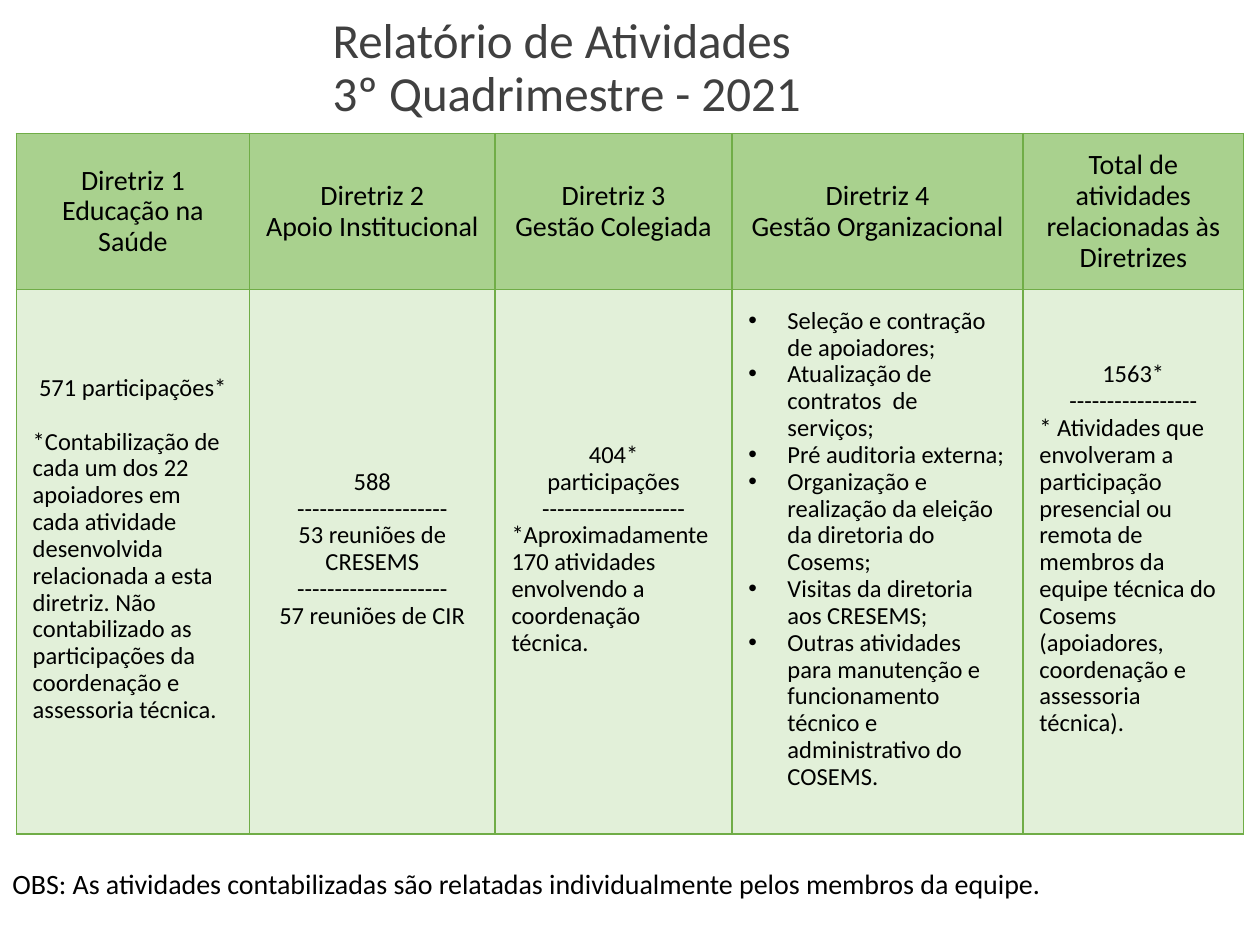
from pptx import Presentation
from pptx.dml.color import RGBColor
from pptx.enum.text import MSO_ANCHOR, MSO_AUTO_SIZE, PP_ALIGN
from pptx.oxml.ns import qn
from pptx.util import Inches, Pt
from lxml.etree import SubElement

FONT = "Calibri"
COLORS = {
    "title": "404040",
    "text": "000000",
    "header": "A9D18E",
    "body": "E2F0D9",
    "border": "70AD47",
}
INSET = 0.13
COLUMN_WIDTHS = [1.85, 1.95, 1.88, 2.31, 1.75]
ROW_HEIGHTS = [1.24, 4.32]

HEADERS = [
    ["Diretriz 1", "Educação na Saúde"],
    ["Diretriz 2", "Apoio Institucional"],
    ["Diretriz 3", "Gestão Colegiada"],
    ["Diretriz 4", "Gestão Organizacional"],
    ["Total de atividades relacionadas às Diretrizes"],
]
# Each column: centred lines, left-aligned note, bullets, gap before the note
RESULTS = [
    (["571 participações*"],
     ["*Contabilização de cada um dos 22 apoiadores em cada atividade "
      "desenvolvida relacionada a esta diretriz. Não contabilizado as "
      "participações da coordenação e assessoria técnica."], [], 15.4),
    (["588", "-" * 20, "53 reuniões de CRESEMS", "-" * 20, "57 reuniões de CIR"],
     [], [], 0),
    (["404*", "participações", "-" * 19],
     ["*Aproximadamente 170 atividades envolvendo a coordenação técnica."], [], 0),
    ([], [],
     ["Seleção e contração de apoiadores;",
      "Atualização de contratos  de serviços;",
      "Pré auditoria externa;",
      "Organização e realização da eleição da diretoria do Cosems;",
      "Visitas da diretoria aos CRESEMS;",
      "Outras atividades para manutenção e funcionamento técnico e "
      "administrativo do COSEMS."], 0),
    (["1563*", "-" * 17],
     ["* Atividades que envolveram a participação presencial ou remota de "
      "membros da equipe técnica do Cosems (apoiadores, coordenação e "
      "assessoria técnica)."], [], 0),
]


def color(name):
    return RGBColor.from_string(COLORS[name])


def add_bullet(para):
    properties = para._p.get_or_add_pPr()
    properties.set("marL", str(Inches(0.31)))
    properties.set("indent", str(-Inches(0.31)))
    bullet_color = SubElement(properties, qn("a:buClr"))
    SubElement(bullet_color, qn("a:srgbClr")).set("val", COLORS["text"])
    SubElement(properties, qn("a:buFont")).set("typeface", "Arial")
    SubElement(properties, qn("a:buChar")).set("char", "•")


def write_lines(frame, lines, size, ink="text", spacing=0.9):
    """Write (text, alignment, bulleted, space before) lines into a text frame."""
    for index, (text, align, bulleted, gap) in enumerate(lines):
        para = frame.paragraphs[0] if index == 0 else frame.add_paragraph()
        para.alignment = align
        para.line_spacing = spacing
        para.space_before = Pt(gap)
        para.space_after = Pt(0)
        if bulleted:
            add_bullet(para)
        span = para.add_run()
        span.text = text
        span.font.name = FONT
        span.font.size = Pt(size)
        span.font.color.rgb = color(ink)


def set_insets(holder, bottom=INSET):
    holder.margin_left = holder.margin_right = holder.margin_top = Inches(INSET)
    holder.margin_bottom = Inches(bottom)


def add_borders(cell):
    properties = cell._tc.get_or_add_tcPr()
    for index, side in enumerate(("a:lnL", "a:lnR", "a:lnT", "a:lnB")):
        line = SubElement(properties, qn(side))
        line.set("w", str(Pt(1)))
        fill = SubElement(line, qn("a:solidFill"))
        SubElement(fill, qn("a:srgbClr")).set("val", COLORS["border"])
        properties.insert(index, line)


def fill_cell(cell, lines, size, background, bottom=INSET):
    cell.fill.solid()
    cell.fill.fore_color.rgb = color(background)
    cell.vertical_anchor = MSO_ANCHOR.MIDDLE
    set_insets(cell, bottom)
    add_borders(cell)
    write_lines(cell.text_frame, lines, size)


def add_title(page):
    title = page.shapes.title
    title.left, title.top = Inches(2.51), Inches(0)
    title.width, title.height = Inches(7.36), Inches(0.87)
    frame = title.text_frame
    frame.word_wrap = True
    frame.auto_size = MSO_AUTO_SIZE.NONE
    frame.vertical_anchor = MSO_ANCHOR.TOP
    set_insets(frame)
    lines = ["Relatório de Atividades", "3º Quadrimestre - 2021"]
    write_lines(frame, [(text, PP_ALIGN.LEFT, False, 0) for text in lines], 28, "title")


def add_activity_table(page):
    table = page.shapes.add_table(
        len(ROW_HEIGHTS), len(COLUMN_WIDTHS), Inches(0.13), Inches(1.06),
        Inches(sum(COLUMN_WIDTHS)), Inches(sum(ROW_HEIGHTS))).table
    table.horz_banding = False
    for column, width in zip(table.columns, COLUMN_WIDTHS):
        column.width = Inches(width)
    for row, height in zip(table.rows, ROW_HEIGHTS):
        row.height = Inches(height)

    # Header row has regular weight
    table.first_row = False
    for index, header in enumerate(HEADERS):
        lines = [(text, PP_ALIGN.CENTER, False, 0) for text in header]
        fill_cell(table.cell(0, index), lines, 16, "header")

    # Results row sits slightly above the middle
    for index, (centred, notes, bullets, gap) in enumerate(RESULTS):
        lines = [(text, PP_ALIGN.CENTER, False, 0) for text in centred]
        lines += [(text, PP_ALIGN.LEFT, False, gap) for text in notes]
        lines += [(text, PP_ALIGN.LEFT, True, 0) for text in bullets]
        fill_cell(table.cell(1, index), lines, 14, "body", bottom=0.33)


def add_footnote(page):
    box = page.shapes.add_textbox(Inches(0), Inches(6.83), Inches(8.38), Inches(0.37))
    frame = box.text_frame
    frame.word_wrap = True
    frame.auto_size = MSO_AUTO_SIZE.SHAPE_TO_FIT_TEXT
    note = ("OBS: As atividades contabilizadas são relatadas individualmente "
            "pelos membros da equipe.")
    write_lines(frame, [(note, PP_ALIGN.LEFT, False, 0)], 16, spacing=1.0)


def main():
    deck = Presentation()
    deck.slide_width, deck.slide_height = Inches(10), Inches(7.5)
    page = deck.slides.add_slide(deck.slide_layouts[5])
    add_title(page)
    add_activity_table(page)
    add_footnote(page)
    deck.save("out.pptx")


if __name__ == "__main__":
    main()
